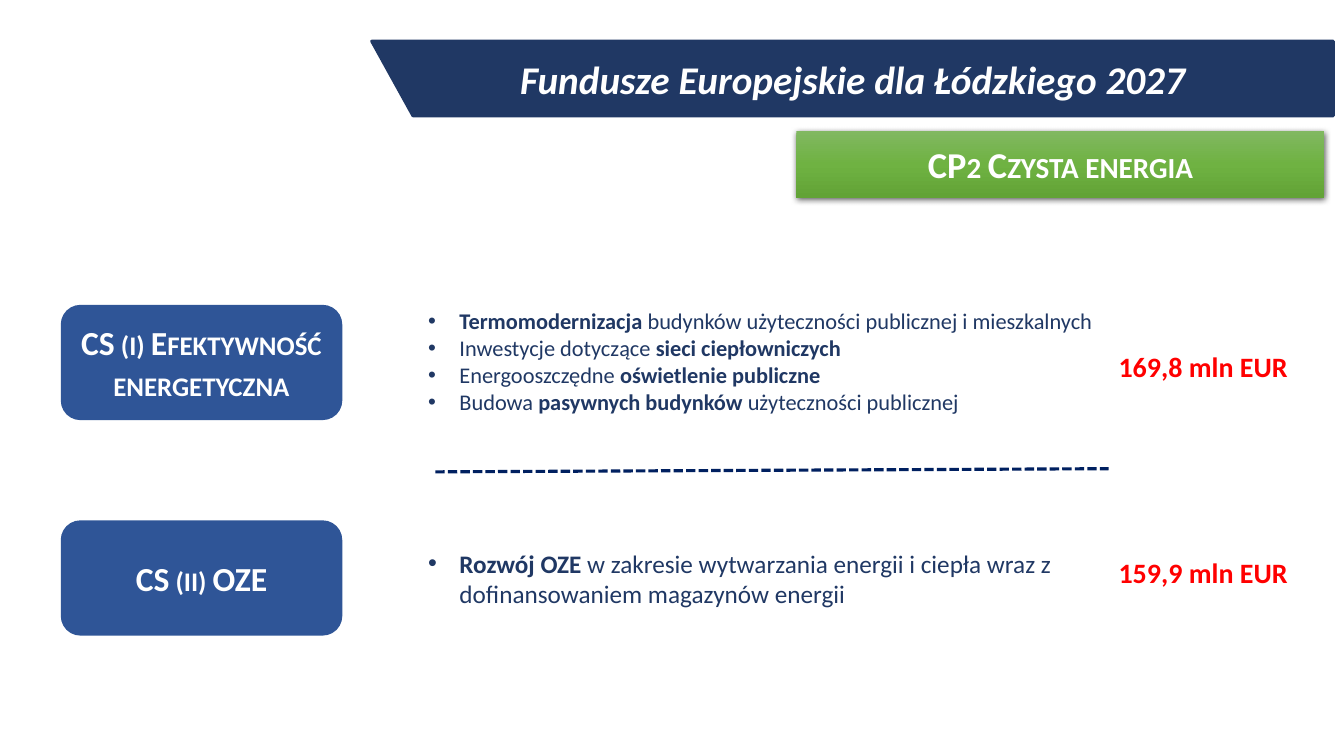
from copy import deepcopy

from lxml import etree
from pptx import Presentation
from pptx import util as u
from pptx.dml.color import RGBColor
from pptx.enum import dml, shapes, text
from pptx.oxml import parse_xml
from pptx.oxml.ns import nsdecls, qn

NAVY, BLUE, WHITE, RED = "203864", "2F5597", "FFFFFF", "FF0000"


def colour(value):
    """Return the colour for a hex string."""
    return RGBColor.from_string(value)


def add_text(paragraph, content, *, size, color, bold=True, italic=False, small_caps=False):
    """Append a formatted run to a paragraph."""
    run = paragraph.add_run()
    run.text = content
    run.font.name = "Calibri"
    run.font.size = u.Pt(size)
    run.font.bold = bold
    run.font.italic = italic
    run.font.color.rgb = colour(color)
    if small_caps:
        run.font._element.set("cap", "small")


def label(shape, content, **text_format):
    """Write centred white text in the middle of a shape."""
    frame = shape.text_frame
    frame.word_wrap = True
    frame.vertical_anchor = text.MSO_ANCHOR.MIDDLE
    paragraph = frame.paragraphs[0]
    paragraph.alignment = text.PP_ALIGN.CENTER
    add_text(paragraph, content, color=WHITE, **text_format)


def paint(shape, color, line_width):
    """Give a shape one colour for fill and outline, without shadow."""
    shape.shadow.inherit = False
    shape.fill.solid()
    shape.fill.fore_color.rgb = colour(color)
    shape.line.color.rgb = colour(color)
    shape.line.width = u.Pt(line_width)


def add_title_banner(slide, title):
    """Draw the banner with a slanted left end."""
    left, top, right, bottom = u.Cm(9.37), u.Cm(1.04), u.Cm(33.6), u.Cm(2.92)
    builder = slide.shapes.build_freeform(left, top)
    builder.add_line_segments([(right, top), (right, bottom), (u.Cm(10.41), bottom)])
    banner = builder.convert_to_shape()
    paint(banner, NAVY, 2.25)
    label(banner, title, size=28, italic=True)


def add_priority_bar(slide, title):
    """Draw the green gradient bar with its soft shadow."""
    bar = slide.shapes.add_shape(
        shapes.MSO_SHAPE.RECTANGLE, u.Cm(20.07), u.Cm(3.3), u.Cm(13.31), u.Cm(1.68))
    bar.line.fill.background()
    bar.fill.gradient()
    bar.fill.gradient_angle = 270
    stop_list = bar._element.spPr.find(".//" + qn("a:gsLst"))
    stop_list.append(deepcopy(stop_list[0]))
    for stop, position, color in zip(
            bar.fill.gradient_stops, (0, 0.5, 1), ("81B861", "6FB242", "62A336")):
        stop.position = position
        stop.color.rgb = colour(color)
    bar.shadow.inherit = False
    bar._element.spPr.find(qn("a:effectLst")).append(parse_xml(
        f'<a:outerShdw {nsdecls("a")} blurRad="57150" dist="19050" dir="5400000" '
        'algn="ctr" rotWithShape="0"><a:srgbClr val="000000">'
        '<a:alpha val="63000"/></a:srgbClr></a:outerShdw>'))
    label(bar, title, size=26, small_caps=True)


def add_goal(slide, top, title):
    """Draw a rounded box naming a specific goal."""
    goal = slide.shapes.add_shape(
        shapes.MSO_SHAPE.ROUNDED_RECTANGLE, u.Cm(1.55), u.Cm(top), u.Cm(7.06), u.Cm(2.87))
    paint(goal, BLUE, 1)
    label(goal, title, size=24, small_caps=True)


def add_text_box(slide, left, top, width, height):
    """Add a wrapping text box and return its frame."""
    box = slide.shapes.add_textbox(u.Cm(left), u.Cm(top), u.Cm(width), u.Cm(height))
    box.text_frame.word_wrap = True
    return box.text_frame


def add_bullets(slide, top, width, height, size, items):
    """Add bulleted lines, each a list of (text, bold) parts."""
    frame = add_text_box(slide, 10.54, top, width, height)
    frame.vertical_anchor = text.MSO_ANCHOR.MIDDLE
    for index, parts in enumerate(items):
        paragraph = frame.add_paragraph() if index else frame.paragraphs[0]
        properties = paragraph._p.get_or_add_pPr()
        properties.set("marL", str(u.Cm(0.79)))
        properties.set("indent", str(u.Cm(-0.79)))
        etree.SubElement(properties, qn("a:buFont")).set("typeface", "Arial")
        etree.SubElement(properties, qn("a:buChar")).set("char", "•")
        for content, bold in parts:
            add_text(paragraph, content, size=size, color=NAVY, bold=bold)


def add_amount(slide, top, amount):
    """Add a red budget amount."""
    frame = add_text_box(slide, 27.94, top, 4.88, 1.12)
    add_text(frame.paragraphs[0], amount, size=20, color=RED)


def add_divider(slide):
    """Draw the dashed line between the goals."""
    divider = slide.shapes.add_connector(
        shapes.MSO_CONNECTOR.STRAIGHT, u.Cm(10.97), u.Cm(11.89), u.Cm(27.94), u.Cm(11.81))
    divider.line.color.rgb = colour("002060")
    divider.line.width = u.Pt(2.25)
    divider.line.dash_style = dml.MSO_LINE.SQUARE_DOT
    etree.SubElement(divider._element.spPr, qn("a:effectLst"))


def main():
    """Build and save the slide."""
    presentation = Presentation()
    presentation.slide_width, presentation.slide_height = u.Cm(33.87), u.Cm(19.05)
    slide = presentation.slides.add_slide(presentation.slide_layouts[6])
    add_title_banner(slide, "Fundusze Europejskie dla Łódzkiego 2027")
    add_priority_bar(slide, "CP2 Czysta energia")
    add_goal(slide, 7.7, "CS (i) Efektywność energetyczna")
    add_bullets(slide, 6.68, 22.05, 4.85, 16, [
        [("Termomodernizacja ", True),
         ("budynków użyteczności publicznej i mieszkalnych", False)],
        [("Inwestycje dotyczące ", False), ("sieci ciepłowniczych", True)],
        [("Energooszczędne ", False), ("oświetlenie publiczne", True)],
        [("Budowa ", False), ("pasywnych budynków ", True),
         ("użyteczności publicznej", False)],
    ])
    add_amount(slide, 8.69, "169,8 mln EUR")
    add_divider(slide)
    add_goal(slide, 13.13, "CS (ii) OZE")
    add_bullets(slide, 13.67, 19, 1.8, 18, [
        [("Rozwój OZE ", True),
         ("w zakresie wytwarzania energii i ciepła wraz z "
          "dofinansowaniem magazynów energii", False)],
    ])
    add_amount(slide, 13.87, "159,9 mln EUR")
    presentation.save("out.pptx")


if __name__ == "__main__":
    main()
